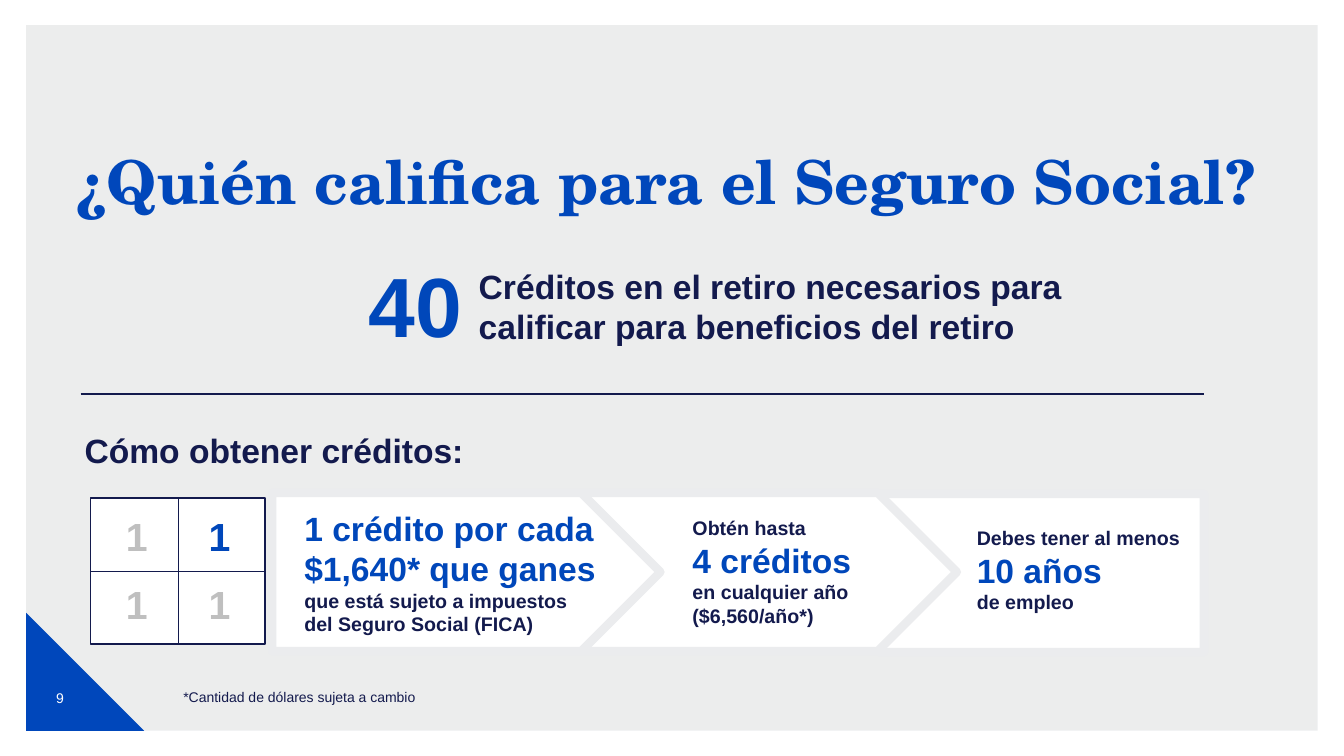
from copy import deepcopy

from lxml import etree
from pptx import Presentation
from pptx.dml.color import RGBColor
from pptx.enum import shapes, text
from pptx.oxml.ns import qn
from pptx.util import Inches, Pt

COLORS = {
    "panel": "D0D3D4", "corner": "0047BB", "accent": "0047BA", "navy": "131A4D",
    "white": "FFFFFF", "plate_edge": "EBECEE", "muted": "BFBFBF",
}
KIND = shapes.MSO_SHAPE


def rgb(name):
    return RGBColor.from_string(COLORS[name])


def add_block(slide, kind, box, fill, edge=None, edge_width=1, opacity=None):
    """Add a filled preset shape; opacity is a percentage."""
    block = slide.shapes.add_shape(kind, *map(Inches, box))
    block.shadow.inherit = False
    block.fill.solid()
    block.fill.fore_color.rgb = rgb(fill)
    if opacity is not None:
        color = block.fill._xPr.find(".//" + qn("a:srgbClr"))
        etree.SubElement(color, qn("a:alpha")).set("val", str(opacity * 1000))
    if edge:
        block.line.color.rgb = rgb(edge)
        block.line.width = Pt(edge_width)
    else:
        block.line.fill.background()
    return block


def add_rule(slide, start, end, width):
    rule = slide.shapes.add_connector(
        shapes.MSO_CONNECTOR.STRAIGHT, *map(Inches, start + end))
    rule.line.color.rgb = rgb("navy")
    rule.line.width = Pt(width)
    etree.SubElement(rule._element.spPr, qn("a:effectLst"))
    return rule


def add_text(slide, box, lines, font="Arial", bold=True, grow=True):
    """Add a one-paragraph text box; each line is a list of (words, size, color)."""
    label = slide.shapes.add_textbox(*map(Inches, box))
    frame = label.text_frame
    frame.word_wrap = True
    if grow:
        frame.auto_size = text.MSO_AUTO_SIZE.SHAPE_TO_FIT_TEXT
    paragraph = frame.paragraphs[0]
    for index, line in enumerate(lines):
        if index:
            paragraph.add_line_break()
            # The break keeps the size of the line it closes.
            paragraph._p[-1].append(deepcopy(run._r.rPr))
        for words, size, color in line:
            run = paragraph.add_run()
            run.text = words
            run.font.name = font
            run.font.size = Pt(size)
            run.font.bold = bold
            run.font.color.rgb = rgb(color)
    return frame


def add_backdrop(slide):
    add_block(slide, KIND.RECTANGLE, (0.26, 0.25, 12.81, 7), "panel", opacity=40)
    add_block(slide, KIND.RIGHT_TRIANGLE, (0.26, 6.08, 1.17, 1.17), "corner")
    number = add_text(slide, (0.32, 6.63, 0.55, 0.58), [[("9", 10, "white")]],
                      bold=False, grow=False)
    number.vertical_anchor = text.MSO_ANCHOR.MIDDLE
    number.paragraphs[0].alignment = text.PP_ALIGN.CENTER


def add_title(slide):
    title = add_text(slide, (0.73, 1.46, 11.75, 0.95),
                     [[("¿Quién califica para el Seguro Social?", 43.2, "corner")]],
                     font="TeX Gyre Schola", grow=False)
    title.margin_left = title.margin_right = 0
    title.paragraphs[0].alignment = text.PP_ALIGN.CENTER
    title.paragraphs[0].line_spacing = 0.9


def add_credit_grid(slide):
    left, top, width, height = 0.9, 4.94, 1.73, 1.45
    grid = add_block(slide, KIND.RECTANGLE, (left, top, width, height), "white", "navy")
    middle_x, middle_y = left + width / 2, top + height / 2
    dividers = [((left, middle_y), (left + width, middle_y), 1, 3),
                ((middle_x, top), (middle_x, top + height), 0, 2)]
    for start, end, first_side, last_side in dividers:
        divider = add_rule(slide, start, end, 0.5)
        divider.begin_connect(grid, first_side)
        divider.end_connect(grid, last_side)
    for row, y in enumerate((5.03, 5.71)):
        for column, x in enumerate((1.15, 1.97)):
            earned = (row, column) == (0, 1)
            add_text(slide, (x, y, 0.55, 0.57),
                     [[("1", 28, "accent" if earned else "muted")]])


def add_steps(slide):
    plates = [((7.94, 4.9, 4, 1.57), 180),
              ((5.64, 4.89, 3.85, 1.57), 0),
              ((2.7, 4.89, 3.85, 1.57), 0)]
    for box, rotation in plates:
        plate = add_block(slide, KIND.PENTAGON, box, "white", "plate_edge", 6)
        plate.rotation = rotation
    add_text(slide, (2.92, 4.99, 3.14, 1.38), [[
        ("1 crédito por cada $1,640* que ganes", 24, "accent"),
        (" ", 18, "navy"),
        ("que está sujeto a impuestos del Seguro Social (FICA)", 14, "navy")]])
    add_text(slide, (6.77, 5.07, 2.16, 1.21), [
        [("Obtén hasta", 14, "navy")],
        [("4 créditos ", 24, "accent")],
        [("en cualquier año ($6,560/año*)", 14, "navy")]])
    add_text(slide, (9.59, 5.17, 2.43, 0.98), [
        [("Debes tener al menos ", 14, "navy")],
        [("10 años ", 24, "accent")],
        [("de empleo", 14, "navy")]])


def main():
    deck = Presentation()
    deck.slide_width, deck.slide_height = Inches(13.33), Inches(7.5)
    slide = deck.slides.add_slide(deck.slide_layouts[6])
    add_backdrop(slide)
    add_title(slide)
    add_text(slide, (3.56, 2.47, 1.73, 1.11), [[("40", 60, "accent")]])
    add_text(slide, (4.65, 2.59, 6.54, 0.91), [[
        ("Créditos en el retiro necesarios para calificar para beneficios del retiro",
         24, "navy")]])
    add_rule(slide, (0.8, 3.91), (11.94, 3.91), 1)
    add_text(slide, (0.74, 4.22, 5.63, 0.5), [[("Cómo obtener créditos:", 24, "navy")]])
    add_steps(slide)
    add_credit_grid(slide)
    add_text(slide, (1.72, 6.78, 10.83, 0.27),
             [[("*Cantidad de dólares sujeta a cambio", 10, "navy")]], bold=False)
    deck.save("out.pptx")


if __name__ == "__main__":
    main()
